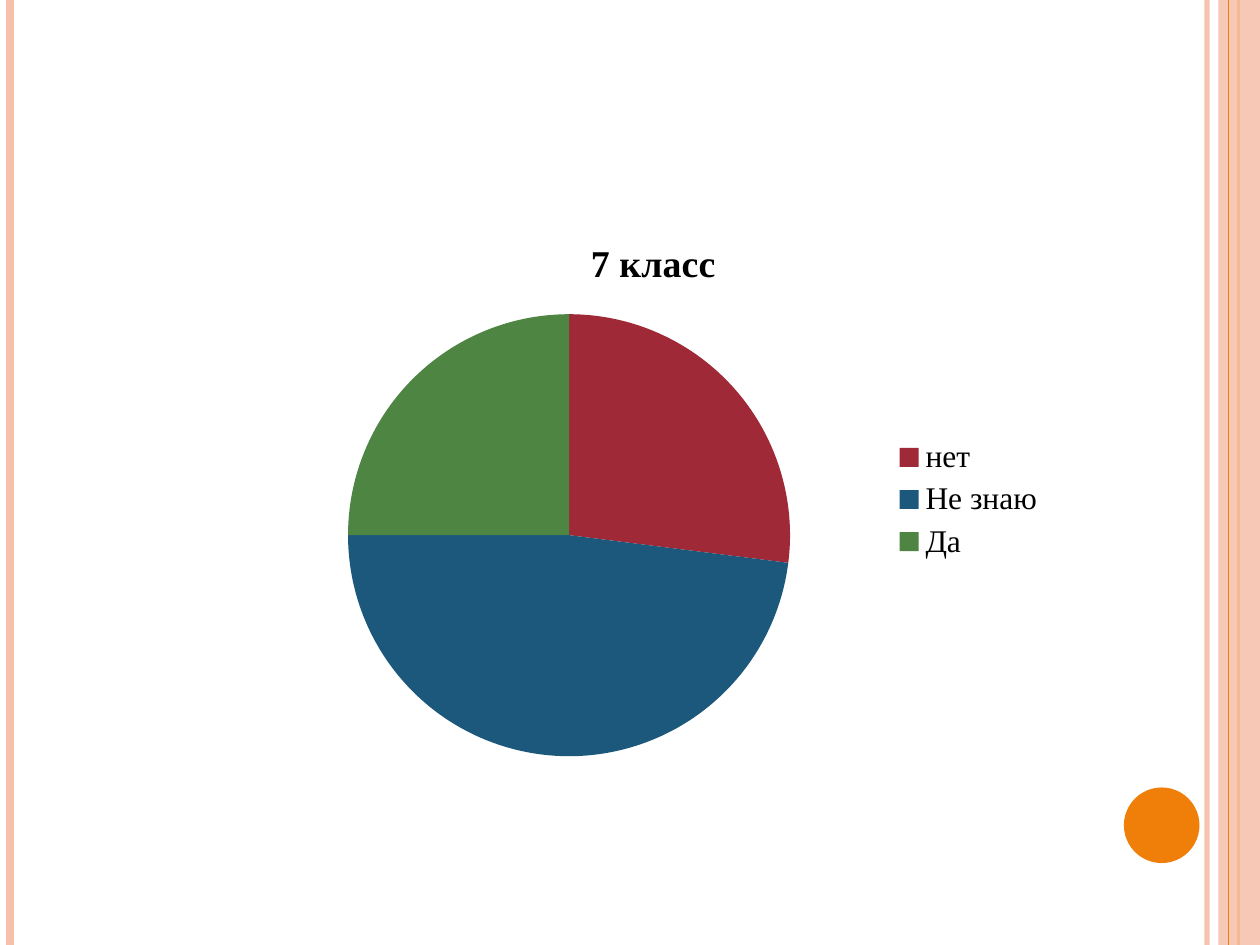
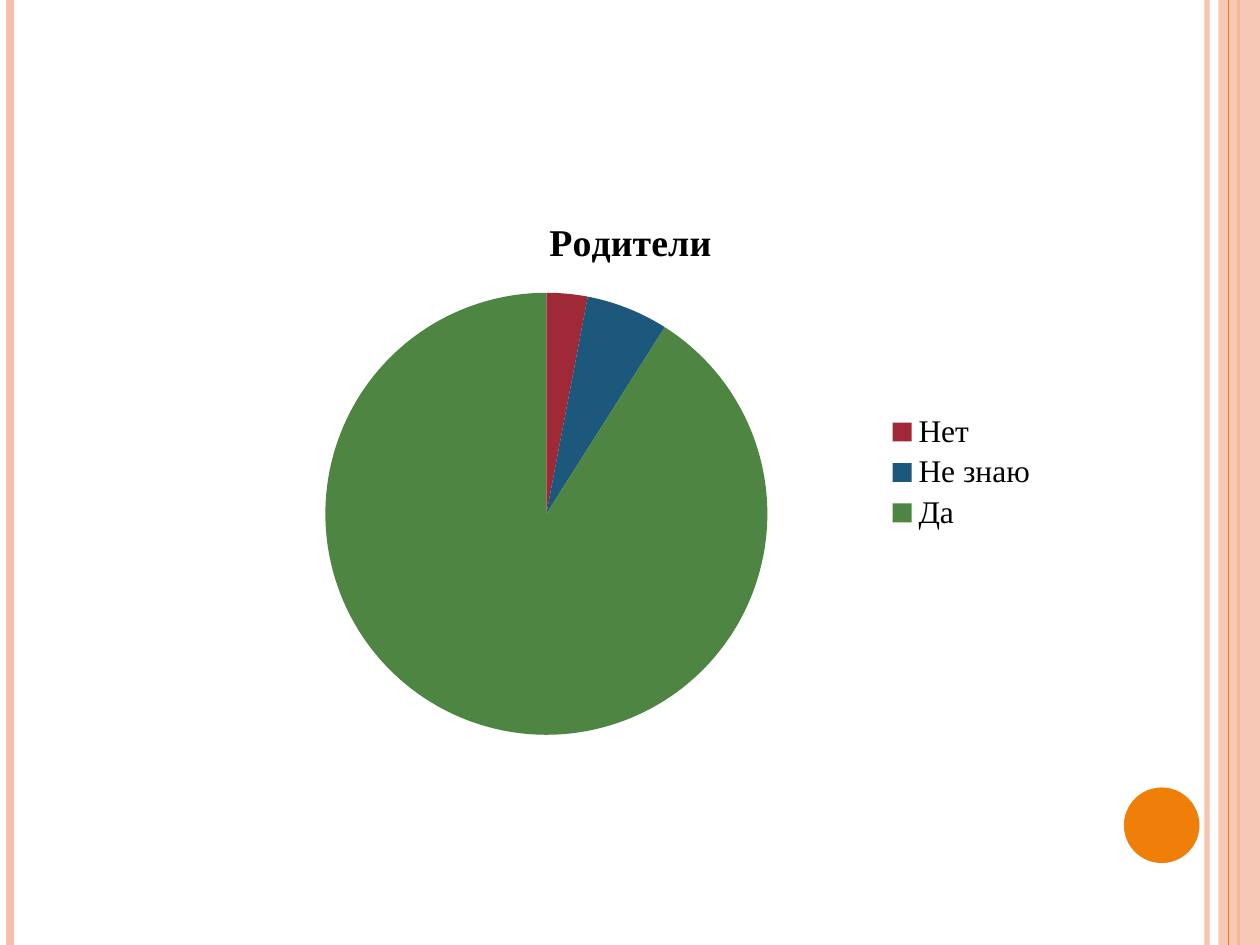
from pptx import Presentation
from pptx.chart.data import CategoryChartData
from pptx.dml.color import RGBColor
from pptx.enum import chart as ch, shapes
from pptx.oxml import parse_xml
from pptx.oxml.ns import nsdecls, qn
from pptx.util import Inches, Pt

FONT = "Times New Roman"
PINK, ORANGE, BLACK = "F6C0AB", "F07F09", "000000"
SLICES = [ORANGE, "9F2936", "1B587C", "4E8542"]
WIDTH, HEIGHT = 10, 7.5
CHART_SIZE = (6.67, 4.44)

# The first category is empty and has no legend entry.
# A legend box, if given, is in fractions of the chart.
SURVEYS = [
    {"title": "7 класс", "at": (1.85, 1.7),
     "answers": [("", None), ("нет", 27), ("Не знаю", 48), ("Да", 25)],
     "legend": {"x": 0.78, "y": 0.39, "w": 0.19, "h": 0.24}},
    {"title": "Родители", "at": (1.67, 1.53),
     "answers": [("", None), ("Нет", 3), ("Не знаю", 6), ("Да", 91)]},
]

# Decoration from back to front: kind, then place and look
DECOR = [
    ("line", 9.58, PINK, 3, 93),
    ("line", 0.08, PINK, 4.5, 100),
    ("line", 9.83, ORANGE, 1.5, 100),
    ("rect", (9.67, 0, 0.33, HEIGHT), PINK, 87),
    ("line", 9.75, ORANGE, 0.75, 100),
    ("ellipse", (8.92, 6.25, 0.6, 0.6), ORANGE, 100),
]
PRESETS = {"rect": shapes.MSO_SHAPE.RECTANGLE, "ellipse": shapes.MSO_SHAPE.OVAL}


def rgb(value):
    return RGBColor.from_string(value)


def paint(fill, color, opacity=100):
    fill.solid()
    fill.fore_color.rgb = rgb(color)
    if opacity < 100:
        clr = fill._xPr.find(".//" + qn("a:srgbClr"))
        clr.append(parse_xml(f'<a:alpha {nsdecls("a")} val="{opacity * 1000}"/>'))


def style_font(font, size, bold):
    for name, value in {"name": FONT, "size": Pt(size), "bold": bold}.items():
        setattr(font, name, value)
    font.color.rgb = rgb(BLACK)


def add_stripe(slide, x, color, width, opacity):
    """Draw a vertical line over the whole slide height."""
    line = slide.shapes.add_connector(
        shapes.MSO_CONNECTOR.STRAIGHT, Inches(x), 0, Inches(x), Inches(HEIGHT))
    line.line.width = Pt(width)
    paint(line.line.fill, color, opacity)
    line._element.spPr.append(parse_xml(f'<a:effectLst {nsdecls("a")}/>'))


def add_block(slide, kind, box, color, opacity):
    sp = slide.shapes.add_shape(PRESETS[kind], *map(Inches, box))
    sp.shadow.inherit = False
    sp.line.fill.background()
    paint(sp.fill, color, opacity)


def add_decor(slide):
    for kind, *look in DECOR:
        if kind == "line":
            add_stripe(slide, *look)
        else:
            add_block(slide, kind, *look)


def add_legend(chart, box):
    """Put the legend on the right, or in box, without its first entry."""
    chart.has_legend = True
    legend = chart.legend
    legend.position = ch.XL_LEGEND_POSITION.RIGHT
    legend.include_in_layout = False
    for layout in legend._element.findall(qn("c:layout")):
        legend._element.remove(layout)
    entry = parse_xml(
        f'<c:legendEntry {nsdecls("c")}><c:idx val="0"/><c:delete val="1"/></c:legendEntry>')
    legend._element.find(qn("c:legendPos")).addnext(entry)
    if box:
        modes = '<c:xMode val="edge"/><c:yMode val="edge"/>'
        sizes = "".join(f'<c:{k} val="{v}"/>' for k, v in box.items())
        entry.addnext(parse_xml(
            f'<c:layout {nsdecls("c")}><c:manualLayout>{modes}{sizes}'
            '</c:manualLayout></c:layout>'))


def add_pie(slide, survey):
    labels, values = zip(*survey["answers"])
    data = CategoryChartData()
    data.categories = labels
    data.add_series(survey["title"], values)
    box = map(Inches, survey["at"] + CHART_SIZE)
    chart = slide.shapes.add_chart(ch.XL_CHART_TYPE.PIE, *box, data).chart
    style_font(chart.font, 18, False)

    chart.has_title = True
    tf = chart.chart_title.text_frame
    tf.text = survey["title"]
    style_font(tf.paragraphs[0].runs[0].font, 21.6, True)
    chart.chart_title.include_in_layout = False
    add_legend(chart, survey.get("legend"))

    plot = chart.plots[0]
    plot.vary_by_categories = True
    for i, color in enumerate(SLICES):
        paint(plot.series[0].points[i].format.fill, color)


def main():
    prs = Presentation()
    prs.slide_width, prs.slide_height = Inches(WIDTH), Inches(HEIGHT)
    for survey in SURVEYS:
        slide = prs.slides.add_slide(prs.slide_layouts[6])
        add_decor(slide)
        add_pie(slide, survey)
    prs.save("out.pptx")


if __name__ == "__main__":
    main()
